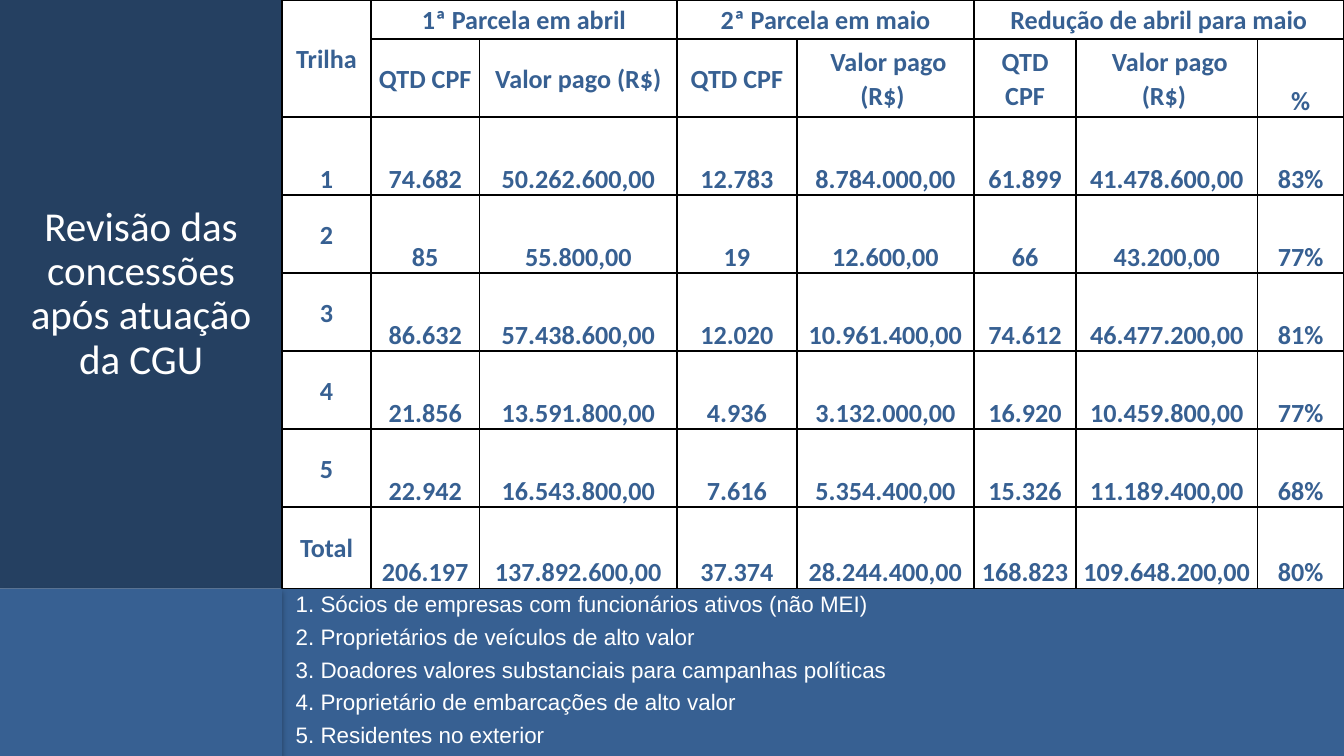
"""Build the slide comparing April and May payments after the CGU review."""
from dataclasses import dataclass

from lxml import etree
from pptx import Presentation
from pptx import util as u
from pptx.dml.color import RGBColor
from pptx.enum import shapes, text
from pptx.oxml.ns import qn

TOP, MIDDLE, BOTTOM = text.MSO_ANCHOR.TOP, text.MSO_ANCHOR.MIDDLE, text.MSO_ANCHOR.BOTTOM


@dataclass(frozen=True)
class Theme:
    navy: str = "254061"
    blue: str = "376092"
    white: str = "FFFFFF"
    black: str = "000000"
    heading_font: str = "Calibri"
    list_font: str = "Arial"
    title_size: float = 22
    table_size: float = 14
    list_size: float = 12
    rule_width: float = 1


@dataclass(frozen=True)
class Box:
    left: float
    top: float
    width: float
    height: float


@dataclass(frozen=True)
class Row:
    height: float
    entries: tuple[str, ...]
    trail_anchor: text.MSO_ANCHOR = MIDDLE
    value_anchor: text.MSO_ANCHOR = BOTTOM
    percent_anchor: text.MSO_ANCHOR = BOTTOM

    def anchor(self, column: int) -> text.MSO_ANCHOR:
        if column == 0:
            return self.trail_anchor
        return self.percent_anchor if column == 7 else self.value_anchor


THEME = Theme()
WIDTH, HEIGHT = 720, 405
SIDE, TABLE_HEIGHT = 151.2, 315.4
TITLE_BOX = Box(0, 0, SIDE, TABLE_HEIGHT)
TABLE_BOX = Box(SIDE, 0, WIDTH - SIDE, TABLE_HEIGHT)
LIST_BOX = Box(SIDE, TABLE_HEIGHT, WIDTH - SIDE, HEIGHT - TABLE_HEIGHT)
CORNER_BOX = Box(0, TABLE_HEIGHT, SIDE, HEIGHT - TABLE_HEIGHT)

TITLE = "Revisão das concessões após atuação da CGU"
TRAILS = (
    "1. Sócios de empresas com funcionários ativos (não MEI)",
    "2. Proprietários de veículos de alto valor",
    "3. Doadores valores substanciais para campanhas políticas",
    "4. Proprietário de embarcações de alto valor",
    "5. Residentes no exterior",
)
COLUMNS = (47.5, 58.3, 105.8, 64.1, 95, 54.7, 97.2, 46.2)
MERGES = ((0, 0, 1, 0), (0, 1, 0, 2), (0, 3, 0, 4), (0, 5, 0, 7))
COUNT, AMOUNT = "QTD CPF", " Valor pago (R$) "
ROW_HEIGHT = 41.8
ROWS = (
    Row(20.9, ("Trilha", "1ª Parcela em abril", "", "2ª Parcela em maio", "",
               "Redução de abril para maio", "", ""), value_anchor=MIDDLE),
    Row(ROW_HEIGHT, ("", COUNT, AMOUNT, COUNT, AMOUNT, COUNT, AMOUNT, "%"), value_anchor=MIDDLE),
    Row(ROW_HEIGHT, ("1", "74.682", "50.262.600,00", "12.783", "8.784.000,00",
                     "61.899", "41.478.600,00", "83%"), trail_anchor=BOTTOM),
    Row(ROW_HEIGHT, ("2", "85", "55.800,00", "19", "12.600,00", "66", "43.200,00", "77%")),
    Row(ROW_HEIGHT, ("3", "86.632", "57.438.600,00", "12.020", "10.961.400,00",
                     "74.612", "46.477.200,00", "81%")),
    Row(ROW_HEIGHT, ("4", "21.856", "13.591.800,00", "4.936", "3.132.000,00",
                     "16.920", "10.459.800,00", "77%")),
    Row(ROW_HEIGHT, ("5", "22.942", "16.543.800,00", "7.616", "5.354.400,00",
                     "15.326", "11.189.400,00", "68%")),
    Row(43.7, ("Total", "206.197", "137.892.600,00", "37.374", "28.244.400,00",
               "168.823", "109.648.200,00", "80%")),
)


def paint(target, color: str) -> None:
    target.fill.solid()
    target.fill.fore_color.rgb = RGBColor.from_string(color)


def place(panel, box: Box) -> None:
    panel.left, panel.top = u.Pt(box.left), u.Pt(box.top)
    panel.width, panel.height = u.Pt(box.width), u.Pt(box.height)


def write(paragraph, wording: str, font: str, size: float, color: str, bold: bool = False) -> None:
    run = paragraph.add_run()
    run.text = wording
    run.font.name, run.font.size, run.font.bold = font, u.Pt(size), bold
    run.font.color.rgb = RGBColor.from_string(color)


def prepare(panel, box: Box, color: str, anchor: text.MSO_ANCHOR):
    place(panel, box)
    paint(panel, color)
    frame = panel.text_frame
    frame.word_wrap, frame.auto_size = True, text.MSO_AUTO_SIZE.NONE
    frame.vertical_anchor = anchor
    return frame


def draw_title(heading) -> None:
    paragraph = prepare(heading, TITLE_BOX, THEME.navy, MIDDLE).paragraphs[0]
    paragraph.alignment = text.PP_ALIGN.CENTER
    paragraph.line_spacing, paragraph.space_after = 0.9, u.Pt(6)
    write(paragraph, TITLE, THEME.heading_font, THEME.title_size, THEME.white)


def draw_trails(legend) -> None:
    frame = prepare(legend, LIST_BOX, THEME.blue, TOP)
    for index, trail in enumerate(TRAILS):
        paragraph = frame.add_paragraph() if index else frame.paragraphs[0]
        properties = paragraph._p.get_or_add_pPr()
        properties.set("marL", "0")
        properties.set("indent", "0")
        etree.SubElement(properties, qn("a:buNone"))
        paragraph.alignment = text.PP_ALIGN.LEFT
        paragraph.line_spacing = 0.8
        paragraph.space_before = u.Pt(6 if index else 0)
        write(paragraph, trail, THEME.list_font, THEME.list_size, THEME.white)


def rule_cell(cell) -> None:
    properties = cell._tc.get_or_add_tcPr()
    for index, side in enumerate(("lnL", "lnR", "lnT", "lnB")):
        line = etree.Element(qn(f"a:{side}"), w=str(u.Pt(THEME.rule_width)))
        solid = etree.SubElement(line, qn("a:solidFill"))
        etree.SubElement(solid, qn("a:srgbClr"), val=THEME.black)
        properties.insert(index, line)


def draw_cell(cell, wording: str, anchor: text.MSO_ANCHOR) -> None:
    paint(cell, THEME.white)
    rule_cell(cell)
    cell.margin_left = cell.margin_right = u.Pt(3.6)
    cell.margin_top = cell.margin_bottom = u.Pt(0)
    cell.vertical_anchor = anchor
    paragraph = cell.text_frame.paragraphs[0]
    paragraph.alignment, paragraph.line_spacing = text.PP_ALIGN.CENTER, 1.07
    if wording:
        write(paragraph, wording, THEME.heading_font, THEME.table_size, THEME.blue, bold=True)


def draw_payments(slide) -> None:
    frame = slide.shapes.add_table(len(ROWS), len(COLUMNS), 0, 0, u.Pt(TABLE_BOX.width),
                                   u.Pt(TABLE_BOX.height))
    payments = frame.table
    payments.first_row = payments.horz_banding = False
    for column, width in zip(payments.columns, COLUMNS):
        column.width = u.Pt(width)
    for index, row in enumerate(ROWS):
        payments.rows[index].height = u.Pt(row.height)
        for column, wording in enumerate(row.entries):
            draw_cell(payments.cell(index, column), wording, row.anchor(column))
    for top, left, bottom, right in MERGES:
        payments.cell(top, left).merge(payments.cell(bottom, right))
    place(frame, TABLE_BOX)


def draw_corner(slide) -> None:
    corner = slide.shapes.add_shape(shapes.MSO_SHAPE.RECTANGLE, 0, 0, 0, 0)
    place(corner, CORNER_BOX)
    paint(corner, THEME.blue)
    corner.line.fill.background()
    corner.shadow.inherit = False
    effects = corner._element.spPr.find(qn("a:effectLst"))
    shade = etree.SubElement(effects, qn("a:outerShdw"), blurRad=str(u.Pt(3.1)),
                             dist=str(u.Pt(1.8)), dir="5400000", rotWithShape="0")
    tint = etree.SubElement(shade, qn("a:srgbClr"), val=THEME.black)
    etree.SubElement(tint, qn("a:alpha"), val="35000")


def main() -> None:
    deck = Presentation()
    deck.slide_width, deck.slide_height = u.Pt(WIDTH), u.Pt(HEIGHT)
    slide = deck.slides.add_slide(deck.slide_layouts[1])
    draw_title(slide.shapes.title)
    draw_trails(slide.placeholders[1])
    draw_payments(slide)
    draw_corner(slide)
    deck.save("out.pptx")


if __name__ == "__main__":
    main()
